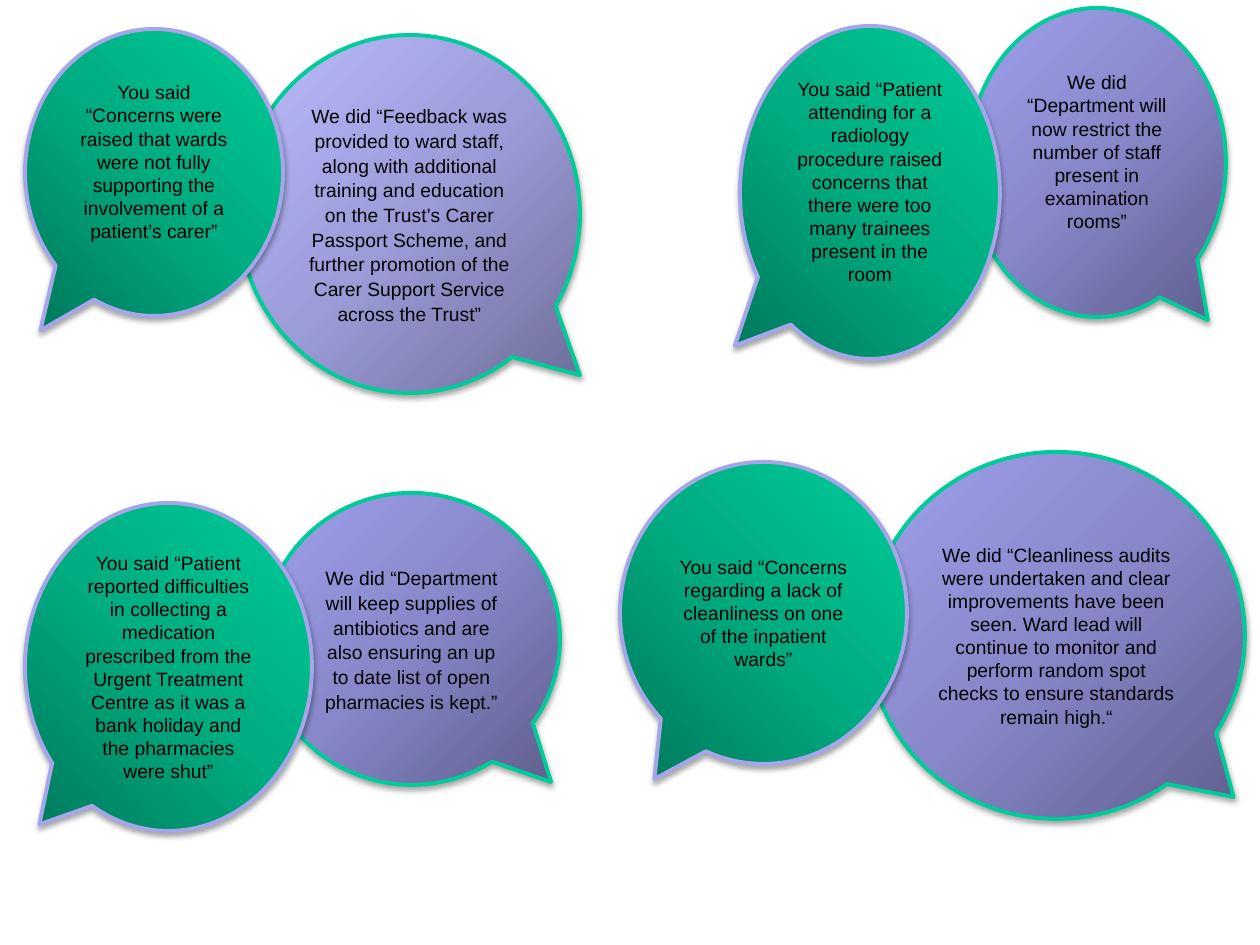
from lxml import etree
from pptx import Presentation
from pptx.dml.color import RGBColor
from pptx.enum.shapes import MSO_SHAPE as Shape
from pptx.enum.text import MSO_ANCHOR as Anchor, PP_ALIGN as Align
from pptx.oxml import parse_xml
from pptx.oxml.ns import nsdecls, qn
from pptx.util import Pt

PX = 914400 // 126  # EMU in one px
COLORS = {"green": "00CC99", "lilac": "A5A5E9", "black": "000000"}
GRADIENTS = {
    "green": ("00795B", "00AC81", "00CC99"),
    "violet": ("5F5F8D", "8787C9", "A0A0EE"),
    "pale": ("6E6E98", "9C9CD9", "BBBBFF"),
}
LINE_HEIGHT = 22


def rgb(name):
    return RGBColor.from_string(COLORS[name])


def write(tf, text, size=11, font="Arial", color="black", spacing=None, after=0):
    p = tf.paragraphs[0]
    p.alignment = Align.CENTER
    if spacing:
        p.line_spacing = spacing
    p.space_after = Pt(after)
    r = p.add_run()
    r.text = text
    r.font.size, r.font.name = Pt(size), font
    r.font.color.rgb = rgb(color)


class Bubbles:
    def __init__(self, slide):
        self.s = slide

    def gradient(self, sp, name, focus):
        """Fill with a circular gradient that starts at the focus corner."""
        stops = "".join(
            f'<a:gs pos="{i * 50000}"><a:srgbClr val="{c}"/></a:gs>'
            for i, c in enumerate(GRADIENTS[name]))
        rect = " ".join(f'{side}="100000"' for side in focus)
        sp.element.spPr.find(qn("a:prstGeom")).addnext(parse_xml(
            f'<a:gradFill {nsdecls("a")} rotWithShape="1"><a:gsLst>{stops}</a:gsLst>'
            f'<a:path path="circle"><a:fillToRect {rect}/></a:path></a:gradFill>'))

    def soft_shadow(self, sp):
        sp.shadow.inherit = False
        effects = sp.element.spPr.find(qn("a:effectLst"))
        shadow = etree.SubElement(effects, qn("a:outerShdw"), blurRad="40000",
                                  dist="23000", dir="5400000", rotWithShape="0")
        color = etree.SubElement(shadow, qn("a:srgbClr"), val=COLORS["black"])
        etree.SubElement(color, qn("a:alpha"), val="35000")

    def bubble(self, box, tail, text, fill, line, focus, raised=False, **fmt):
        """Draw a callout; raised text sits half a line above the middle."""
        sp = self.s.shapes.add_shape(Shape.OVAL_CALLOUT, *(n * PX for n in box))
        sp.adjustments[0], sp.adjustments[1] = tail
        self.gradient(sp, fill, focus)
        sp.line.color.rgb = rgb(line)
        sp.line.width = Pt(2.25)
        self.soft_shadow(sp)
        tf = sp.text_frame
        tf.word_wrap = True
        tf.vertical_anchor = Anchor.MIDDLE
        if raised:
            tf.margin_bottom += LINE_HEIGHT * PX
        write(tf, text, **fmt)

    def you_said(self, box, tail, text, **kw):
        self.bubble(box, tail, f"You said “{text}", "green", "lilac", "tr", **kw)

    def we_did(self, box, tail, text, fill="violet", **kw):
        self.bubble(box, tail, f"We did “{text}", fill, "green", "lt", **kw)


def main():
    prs = Presentation()
    prs.slide_width, prs.slide_height = 1260 * PX, 945 * PX
    b = Bubbles(prs.slides.add_slide(prs.slide_layouts[6]))
    loose = {"spacing": 1.07, "after": 8}

    b.we_did((868, 452, 377, 367), (0.47, 0.44),
             "Cleanliness audits were undertaken and clear improvements have been "
             "seen. Ward lead will continue to monitor and perform random spot "
             "checks to ensure standards remain high.“")
    b.we_did((263, 493, 297, 292), (0.47, 0.49),
             "Department will keep supplies of antibiotics and are also ensuring "
             "an up to date list of open pharmacies is kept.”", **loose)
    b.you_said((25, 503, 287, 328), (-0.45, 0.48),
               "Patient reported difficulties in collecting a medication prescribed "
               "from the Urgent Treatment Centre as it was a bank holiday and the "
               "pharmacies were shut”")
    b.we_did((239, 35, 341, 358), (0.5, 0.45),
             "Feedback was provided to ward staff, along with additional training "
             "and education on the Trust’s Carer Passport Scheme, and further "
             "promotion of the Carer Support Service across the Trust”",
             fill="pale", **loose)
    b.we_did((968, 8, 258, 309), (0.43, 0.51),
             "Department will now restrict the number of staff present in "
             "examination rooms”", raised=True)
    b.you_said((620, 462, 287, 302), (-0.38, 0.55),
               "Concerns regarding a lack of cleanliness on one of the inpatient "
               "wards”")
    b.you_said((740, 26, 260, 333), (-0.52, 0.46),
               "Patient attending for a radiology procedure raised concerns that "
               "there were too many trainees present in the room", raised=True)
    b.you_said((25, 29, 258, 287), (-0.44, 0.55),
               "Concerns were raised that wards were not fully supporting the "
               "involvement of a patient’s carer”", raised=True)

    prs.save("out.pptx")


if __name__ == "__main__":
    main()
